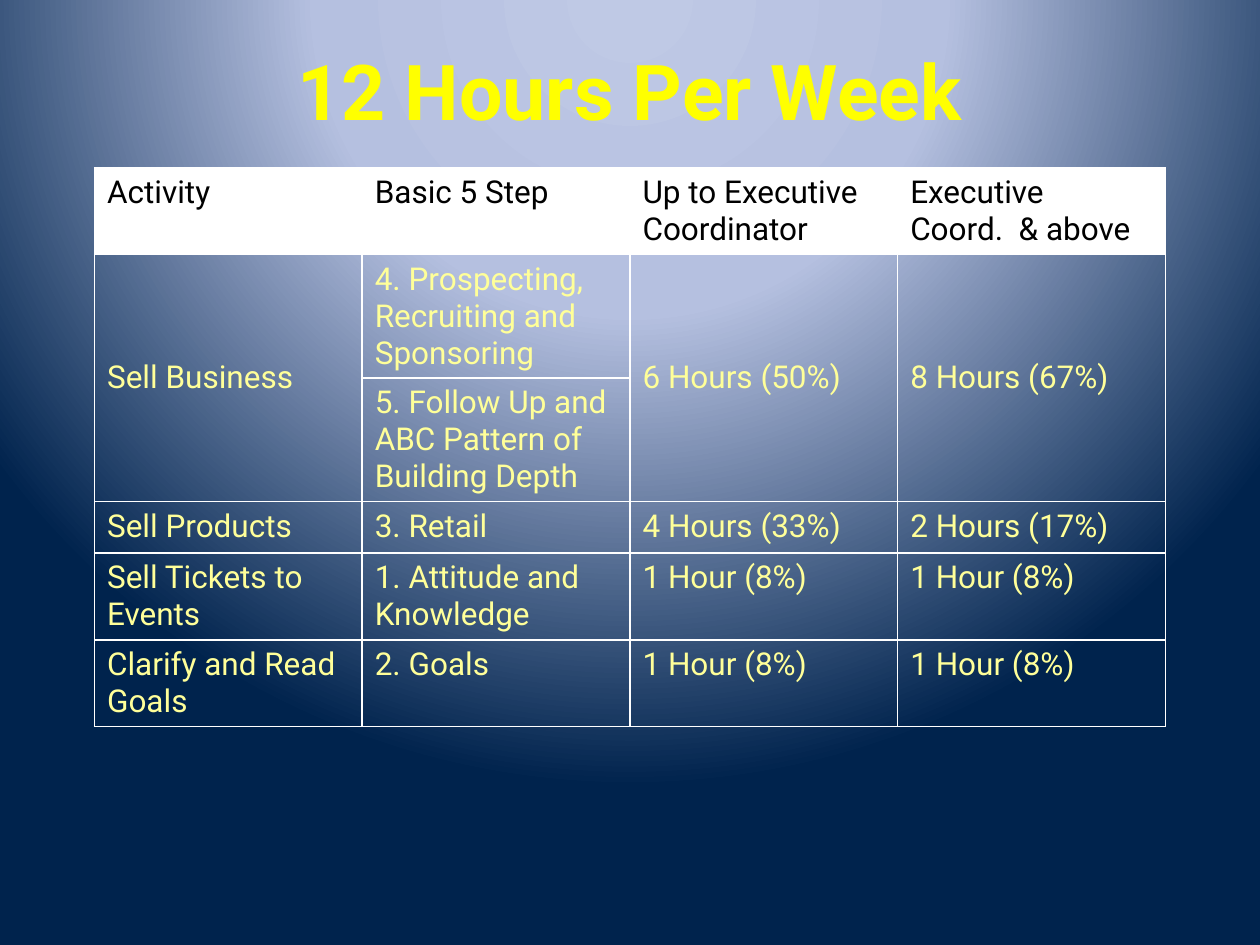
import pptx
import pptx.util
import pptx.dml.color
import pptx.enum.text
import pptx.oxml
import pptx.oxml.ns

Pt = pptx.util.Pt
RGB = pptx.dml.color.RGBColor.from_string
ANCHOR = pptx.enum.text.MSO_ANCHOR
A_NS = pptx.oxml.ns.nsdecls("a")

COLORS = {
    "glow": "BFC9E5", "haze": "B5C0E0", "navy": "00234D",
    "title": "FFFF00", "header": "000000", "body": "FFFF99", "white": "FFFFFF",
}
FONT = "Roboto"


def format_text(frame, color, formats):
    for paragraph in frame.paragraphs:
        for name, value in formats.items():
            setattr(paragraph.font, name, value)
        paragraph.font.color.rgb = RGB(COLORS[color])


deck = pptx.Presentation()
deck.slide_width, deck.slide_height = Pt(720), Pt(540)
slide = deck.slides.add_slide(deck.slide_layouts[5])

# Background: circular glow centred above the slide
slide.background.fill.gradient()
glow = slide.element.find(".//" + pptx.oxml.ns.qn("a:gradFill"))
stops = "".join(
    f'<a:gs pos="{percent * 1000}"><a:srgbClr val="{COLORS[color]}"/></a:gs>'
    for percent, color in [(0, "glow"), (40, "haze"), (100, "navy")])
glow.getparent().replace(glow, pptx.oxml.parse_xml(
    f'<a:gradFill {A_NS} rotWithShape="1"><a:gsLst>{stops}</a:gsLst>'
    '<a:path path="circle"><a:fillToRect l="50000" t="-80000" r="50000" b="180000"/>'
    '</a:path></a:gradFill>'))

# Title
title = slide.shapes.title
title.left, title.top, title.width, title.height = Pt(54), Pt(6), Pt(612), Pt(90)
title.text_frame.text = "12 Hours Per Week"
title.text_frame.vertical_anchor = ANCHOR.MIDDLE
title.text_frame.paragraphs[0].alignment = pptx.enum.text.PP_ALIGN.CENTER
format_text(title.text_frame, "title", {"name": FONT, "size": Pt(44), "bold": True})

# Weekly hours by activity
schedule = [
    ["Activity", "Basic 5 Step", "Up to Executive Coordinator",
     "Executive \vCoord.  & above"],
    ["Sell Business", "4. Prospecting, Recruiting and Sponsoring",
     "6 Hours (50%)", "8 Hours (67%)"],
    ["", "5. Follow Up and ABC Pattern of Building Depth", "", ""],
    ["Sell Products", "3. Retail", "4 Hours (33%)", "2 Hours (17%)"],
    ["Sell Tickets to Events", "1. Attitude and Knowledge", "1 Hour (8%)", "1 Hour (8%)"],
    ["Clarify and Read Goals", "2. Goals", "1 Hour (8%)", "1 Hour (8%)"],
]
row_height = Pt(29.5)
hours = slide.shapes.add_table(
    len(schedule), len(schedule[0]), Pt(54), Pt(96), Pt(612),
    row_height * len(schedule)).table
hours.first_row = hours.horz_banding = False

for row, entries in enumerate(schedule):
    hours.rows[row].height = row_height
    for column, entry in enumerate(entries):
        cell = hours.cell(row, column)
        cell.text = entry
        format_text(cell.text_frame, "body" if row else "header",
                    {"name": FONT, "size": Pt(18), "bold": False})
        cell.vertical_anchor = ANCHOR.MIDDLE if row in (1, 2) else ANCHOR.TOP
        if row:
            cell.fill.background()
        else:
            cell.fill.solid()
            cell.fill.fore_color.rgb = RGB(COLORS["white"])
        # Thin white borders
        for position, side in enumerate("LRTB"):
            cell._tc.get_or_add_tcPr().insert(position, pptx.oxml.parse_xml(
                f'<a:ln{side} {A_NS} w="{Pt(1)}"><a:solidFill>'
                f'<a:srgbClr val="{COLORS["white"]}"/></a:solidFill></a:ln{side}>'))

# "Sell Business" and its hours span both of its steps
for column in (0, 2, 3):
    hours.cell(1, column).merge(hours.cell(2, column))

deck.save("out.pptx")
